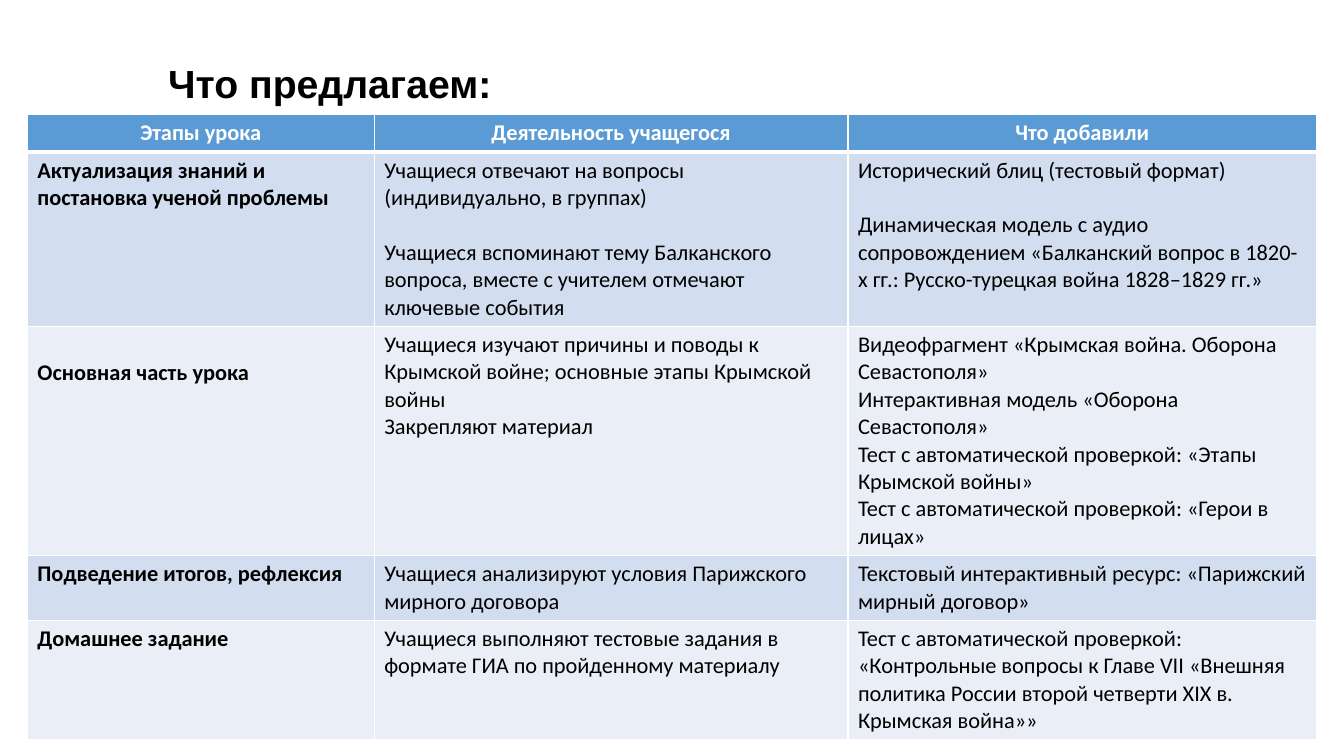
from dataclasses import dataclass

from lxml.etree import SubElement
from pptx import Presentation
from pptx.dml.color import RGBColor
from pptx.enum.text import MSO_ANCHOR, PP_ALIGN
from pptx.oxml.ns import qn
from pptx.util import Cm, Pt

WHITE, BLACK, BLUE = "FFFFFF", "000000", "5B9BD5"
BANDS = ("D2DEEF", "EAEFF7")
COL_WIDTHS = (8.74, 11.94, 11.81)
HEADER_HEIGHT = 0.94
LINE_GAP = Pt(19.5)  # one line of 16 pt text
HEADERS = ("Этапы урока", "Деятельность учащегося", "Что добавили")


@dataclass
class Stage:
    height: float
    name: str
    activity: list[str]
    added: list[str]
    spaced: bool = False
    name_top: float = 0.13


STAGES = [
    Stage(4.38, "Актуализация знаний и постановка ученой проблемы",
          ["Учащиеся отвечают на вопросы (индивидуально, в группах)",
           "Учащиеся вспоминают тему Балканского вопроса, вместе с учителем "
           "отмечают ключевые события"],
          ["Исторический блиц (тестовый формат)",
           "Динамическая модель с аудио сопровождением «Балканский вопрос "
           "в 1820-х гг.: Русско-турецкая война 1828–1829 гг.»"],
          spaced=True),
    Stage(5.76, "Основная часть урока",
          ["Учащиеся изучают причины и поводы к Крымской войне; основные этапы "
           "Крымской войны",
           "Закрепляют материал"],
          ["Видеофрагмент «Крымская война. Оборона Севастополя»",
           "Интерактивная модель «Оборона Севастополя»",
           "Тест с автоматической проверкой: «Этапы Крымской войны»",
           "Тест с автоматической проверкой: «Герои в лицах»"],
          name_top=0.82),
    Stage(1.63, "Подведение итогов, рефлексия",
          ["Учащиеся анализируют условия Парижского мирного договора"],
          ["Текстовый интерактивный ресурс: «Парижский мирный договор»"]),
    Stage(3.0, "Домашнее задание",
          ["Учащиеся выполняют тестовые задания в формате ГИА по пройденному "
           "материалу"],
          ["Тест с автоматической проверкой: «Контрольные вопросы к Главе VII "
           "«Внешняя политика России второй четверти XIX в. Крымская война»»"]),
]


def rgb(color: str) -> RGBColor:
    return RGBColor.from_string(color)


def add_run(p, text: str, size: float, font: str, color: str, bold: bool) -> None:
    r = p.add_run()
    r.text = text
    r.font.size = Pt(size)
    r.font.name = font
    r.font.bold = bold
    r.font.color.rgb = rgb(color)


def set_borders(cell, top: float = 1, bottom: float = 1) -> None:
    """Give the cell white borders, with widths in points."""
    tc_pr = cell._tc.get_or_add_tcPr()
    for side, width in (("L", 1), ("R", 1), ("T", top), ("B", bottom)):
        ln = SubElement(tc_pr, qn(f"a:ln{side}"), w=str(Pt(width)))
        fill = SubElement(ln, qn("a:solidFill"))
        SubElement(fill, qn("a:srgbClr"), val=WHITE)


def fill_cell(cell, texts: list[str], fill: str, color: str = BLACK,
              bold: bool = False, align=PP_ALIGN.LEFT, spaced: bool = False) -> None:
    cell.fill.solid()
    cell.fill.fore_color.rgb = rgb(fill)
    tf = cell.text_frame
    for i, text in enumerate(texts):
        p = tf.add_paragraph() if i else tf.paragraphs[0]
        p.alignment = align
        if i and spaced:
            p.space_before = LINE_GAP
        add_run(p, text, 16, "Calibri", color, bold)


def add_stage_table(slide) -> None:
    heights = [HEADER_HEIGHT] + [stage.height for stage in STAGES]
    table = slide.shapes.add_table(
        len(heights), len(COL_WIDTHS), Cm(0.69), Cm(2.88),
        Cm(sum(COL_WIDTHS)), Cm(sum(heights))).table
    for column, width in zip(table.columns, COL_WIDTHS):
        column.width = Cm(width)
    for row, height in zip(table.rows, heights):
        row.height = Cm(height)

    for col, header in enumerate(HEADERS):
        cell = table.cell(0, col)
        set_borders(cell, bottom=3)
        fill_cell(cell, [header], BLUE, WHITE, True, PP_ALIGN.CENTER)

    for row, stage in enumerate(STAGES, start=1):
        band = BANDS[(row - 1) % 2]
        for col, texts in enumerate(([stage.name], stage.activity, stage.added)):
            cell = table.cell(row, col)
            set_borders(cell, top=3 if row == 1 else 1)
            fill_cell(cell, texts, band, bold=col == 0, spaced=stage.spaced)
        table.cell(row, 0).margin_top = Cm(stage.name_top)


def add_title(slide) -> None:
    tf = slide.shapes.add_textbox(Cm(3.99), Cm(0.84), Cm(27.97), Cm(2.62)).text_frame
    tf.word_wrap = True
    tf.vertical_anchor = MSO_ANCHOR.MIDDLE
    p = tf.paragraphs[0]
    p.line_spacing = 0.9
    add_run(p, "Что предлагаем:", 28, "Arial", BLACK, True)


def main() -> None:
    prs = Presentation()
    prs.slide_width, prs.slide_height = Cm(33.87), Cm(19.05)
    slide = prs.slides.add_slide(prs.slide_layouts[6])
    add_stage_table(slide)
    add_title(slide)
    prs.save("out.pptx")


if __name__ == "__main__":
    main()
